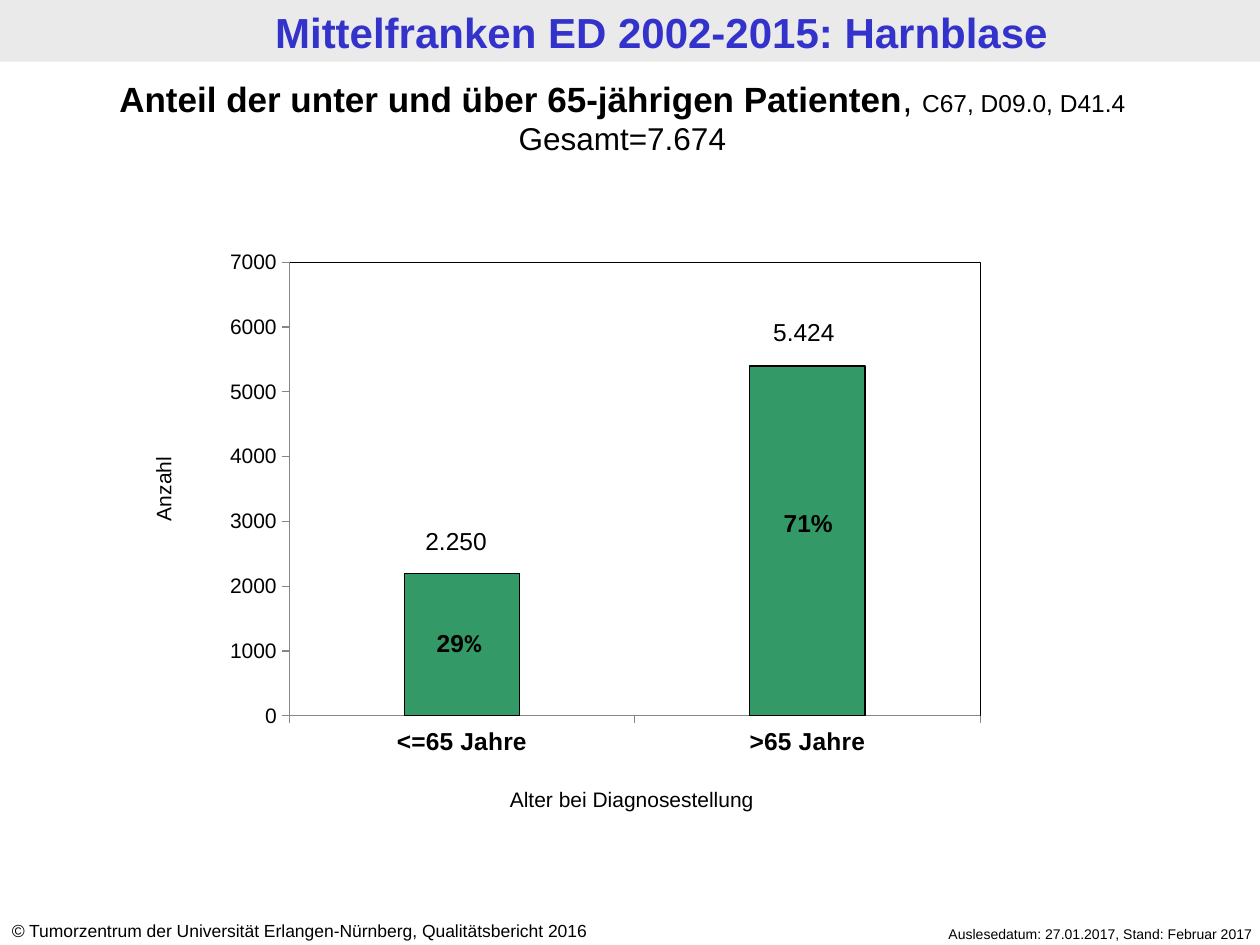
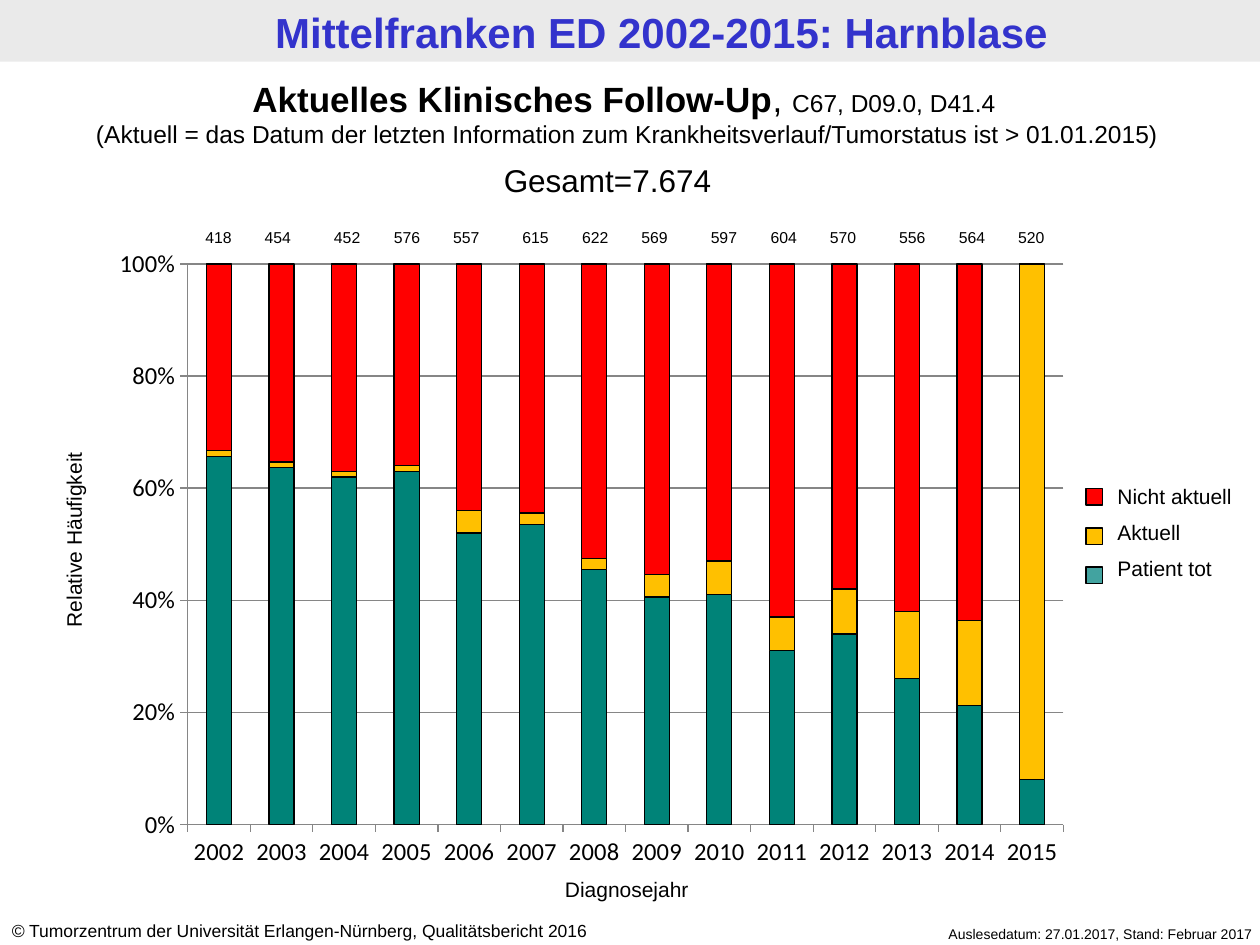
import pptx
import pptx.util
import pptx.chart.data
import pptx.dml.color
import pptx.enum.chart
import pptx.enum.shapes
import pptx.enum.text
import pptx.oxml
import pptx.oxml.ns
from lxml import etree

COLORS = {
    "band": "EAEAEA", "title": "3333CC", "ink": "000000", "axis": "868686",
    "patients": "339966", "dead": "008378", "dead_key": "008380",
    "current": "FFC000", "outdated": "FF0000",
}
COLUMNS, ROWS = 100, 75  # grid covering the slide
SLIDE_WIDTH, SLIDE_HEIGHT = pptx.util.Inches(10), pptx.util.Inches(7.5)
CODES = "C67, D09.0, D41.4"
TOTAL = "Gesamt=7.674"
CENTER = pptx.enum.text.PP_ALIGN.CENTER
RIGHT = pptx.enum.text.PP_ALIGN.RIGHT


def rgb(name):
    return pptx.dml.color.RGBColor.from_string(COLORS[name])


def place(box):
    """Turn a box in grid columns and rows into slide lengths."""
    left, top, width, height = box
    return (round(left * SLIDE_WIDTH / COLUMNS), round(top * SLIDE_HEIGHT / ROWS),
            round(width * SLIDE_WIDTH / COLUMNS), round(height * SLIDE_HEIGHT / ROWS))


def inside(box, right, down, width, height):
    return box[0] + right, box[1] + down, width, height


def put_text(slide, box, paragraphs, size=12, bold=False, italic=False, color="ink",
             font="Arial", align=None, gap=0, rotation=0, insets=(0.1, 0.05, 0.1, 0.05)):
    """Each paragraph is a string or a list of (text, overrides) runs."""
    holder = slide.shapes.add_textbox(*place(box))
    holder.rotation = rotation
    frame = holder.text_frame
    frame.word_wrap = True
    frame.auto_size = pptx.enum.text.MSO_AUTO_SIZE.SHAPE_TO_FIT_TEXT
    (frame.margin_left, frame.margin_top,
     frame.margin_right, frame.margin_bottom) = map(pptx.util.Inches, insets)
    base = {"size": size, "bold": bold, "italic": italic, "font": font}
    for number, content in enumerate(paragraphs):
        paragraph = frame.add_paragraph() if number else frame.paragraphs[0]
        paragraph.alignment = align
        if number and gap:
            paragraph.space_before = pptx.util.Pt(gap)
        for words, overrides in [(content, {})] if isinstance(content, str) else content:
            look = {**base, **overrides}
            run = paragraph.add_run()
            run.text = words
            run.font.size = pptx.util.Pt(look["size"])
            run.font.bold, run.font.italic = look["bold"], look["italic"]
            run.font.name = look["font"]
            run.font.color.rgb = rgb(color)


def put_rectangle(slide, box, color, outlined=False, opacity=None):
    area = slide.shapes.add_shape(pptx.enum.shapes.MSO_SHAPE.RECTANGLE, *place(box))
    area.shadow.inherit = False
    area.fill.solid()
    area.fill.fore_color.rgb = rgb(color)
    if outlined:
        area.line.color.rgb = rgb("ink")
        area.line.width = pptx.util.Pt(0.75)
    else:
        area.line.fill.background()
    if opacity:
        tint = area.fill._xPr.find(".//" + pptx.oxml.ns.qn("a:srgbClr"))
        etree.SubElement(tint, pptx.oxml.ns.qn("a:alpha"), val=str(opacity * 1000))


def shape_plot(chart, box, plot_box, framed):
    """Fix the inner plot area, given in the grid relative to the chart, and its frame."""
    qn = pptx.oxml.ns.qn
    plot_area = chart._chartSpace.chart.plotArea
    for old in plot_area.findall(qn("c:layout")):
        plot_area.remove(old)
    holder = etree.Element(qn("c:layout"))
    manual = etree.SubElement(holder, qn("c:manualLayout"))
    shares = [part / whole for part, whole in zip(plot_box, box[2:] * 2)]
    settings = [("layoutTarget", "inner"), ("xMode", "edge"), ("yMode", "edge")]
    for tag, value in settings + list(zip("xywh", shares)):
        etree.SubElement(manual, qn("c:" + tag), val=str(value))
    plot_area.insert(0, holder)
    if framed:
        plot_area.append(pptx.oxml.parse_xml(
            f'<c:spPr {pptx.oxml.ns.nsdecls("c", "a")}><a:noFill/><a:ln w="9525">'
            f'<a:solidFill><a:srgbClr val="{COLORS["ink"]}"/></a:solidFill></a:ln></c:spPr>'))


def put_columns(slide, box, kind, categories, series, plot_box, gap, step, top,
                font, sizes, bold_categories=False, number_format="General",
                grid=False, framed=False):
    """Series are (name, values, colour); sizes are for category and value labels."""
    figures = pptx.chart.data.CategoryChartData()
    figures.categories = categories
    for name, values, _ in series:
        figures.add_series(name, values)
    chart = slide.shapes.add_chart(kind, *place(box), figures).chart
    chart.has_title = chart.has_legend = False
    chart.font.size = pptx.util.Pt(18)
    chart.font.name = "Calibri"
    chart.font.color.rgb = rgb("ink")

    plot = chart.plots[0]
    plot.gap_width, plot.overlap, plot.vary_by_categories = gap, 100, False
    for bars, (_, _, color) in zip(plot.series, series):
        bars.format.fill.solid()
        bars.format.fill.fore_color.rgb = rgb(color)
        bars.format.line.color.rgb = rgb("ink")
        bars.format.line.width = pptx.util.Pt(0.75)

    for axis, size in zip((chart.category_axis, chart.value_axis), sizes):
        axis.major_tick_mark = pptx.enum.chart.XL_TICK_MARK.OUTSIDE
        axis.minor_tick_mark = pptx.enum.chart.XL_TICK_MARK.NONE
        axis.format.line.color.rgb = rgb("axis")
        axis.tick_labels.font.size = pptx.util.Pt(size)
        axis.tick_labels.font.name = font
        axis.tick_labels.font.color.rgb = rgb("ink")
    chart.category_axis.tick_labels.font.bold = bold_categories
    scale = chart.value_axis
    scale.minimum_scale, scale.maximum_scale, scale.major_unit = 0, top, step
    scale.tick_labels.number_format = number_format
    scale.tick_labels.number_format_is_linked = False
    scale.has_major_gridlines = grid
    if grid:
        scale.major_gridlines.format.line.color.rgb = rgb("axis")
    shape_plot(chart, box, plot_box, framed)


def header(slide, box):
    put_rectangle(slide, box, "band")
    # The wider left inset moves the centred title to the right
    put_text(slide, inside(box, 0.65, 0.15, box[2], box[3]),
             ["Mittelfranken ED 2002-2015: Harnblase"], size=24, bold=True,
             color="title", align=CENTER, insets=(0.46, 0.04, 0.09, 0.04))


def footer(slide, box):
    put_text(slide, inside(box, -0.05, 0, 52.4, 2.7),
             [[("©", {"italic": True}),
               (" Tumorzentrum der Universität Erlangen-Nürnberg, Qualitätsbericht 2016", {})]],
             size=10)
    put_text(slide, inside(box, 66.5, 0.4, 33.9, 2.4),
             ["Auslesedatum: 27.01.2017, Stand: Februar 2017"], size=8, align=RIGHT)


def heading(slide, box, topic, codes, second_line, second_size):
    put_text(slide, box,
             [[(topic, {"bold": True}), (", ", {}), (codes, {"size": 14})],
              [(second_line, {"size": second_size})]], size=20, align=CENTER)


def age_chart(slide, box):
    put_columns(slide, box, pptx.enum.chart.XL_CHART_TYPE.COLUMN_STACKED,
                ["<=65 Jahre", ">65 Jahre"], [("Anzahl", [2200, 5400], "patients")],
                plot_box=(7.85, 6.62, 54.86, 36), gap=200, step=1000, top=7000,
                font="Arial", sizes=(14, 12), bold_categories=True, framed=True)
    # Shares within the bars, counts above them
    percent = {"font": "Calibri"}
    for right, down, label, bold in [
        (16.25, 35.15, [("29", {}), ("%", percent)], True),
        (43.95, 25.65, "71%", True),
        (16, 27.05, "2.250", False),
        (43.6, 10.5, "5.424", False),
    ]:
        put_text(slide, inside(box, right, down, 10.2, 3.4), [label],
                 size=14, bold=bold, align=CENTER)
    # Axis titles
    put_text(slide, inside(box, 18.4, 47.7, 33.3, 3), ["Alter bei Diagnosestellung"],
             align=CENTER)
    put_text(slide, inside(box, -15.2, 23.1, 26.1, 3), ["Anzahl"],
             align=CENTER, rotation=270)


def follow_up_chart(slide, box):
    put_columns(
        slide, box, pptx.enum.chart.XL_CHART_TYPE.COLUMN_STACKED_100,
        [str(year) for year in range(2002, 2016)],
        [("Patient tot", [65, 63, 62, 63, 52, 53, 45, 41, 41, 31, 34, 26, 21, 8], "dead"),
         ("Aktuell", [1, 1, 1, 1, 4, 2, 2, 4, 6, 6, 8, 12, 15, 92], "current"),
         ("Nicht aktuell",
          [33, 35, 37, 36, 44, 44, 52, 56, 53, 63, 58, 62, 63, None], "outdated")],
        plot_box=(7, 2.25, 69.5, 44.5), gap=150, step=0.2, top=1,
        font="Calibri", sizes=(14, 14), number_format="0%", grid=True)
    # Patients per year, set in groups of three
    counts = [418, 454, 452, 576, 557, 615, 622, 569, 597, 604, 570, 556, 564, 520]
    for number, count in enumerate(counts):
        group, member = divmod(number, 3)
        put_text(slide, inside(box, 6.7 + 14.95 * group + (0, 4.7, 10.2)[member], -1.08,
                               5.5, 2.5), [str(count)], size=9, align=CENTER)
    # Axis titles
    put_text(slide, inside(box, -14.05, 22.6, 24.1, 3.1), ["Relative Häufigkeit"],
             align=CENTER, rotation=270)
    put_text(slide, inside(box, 30.6, 50.35, 22.5, 3.1), ["Diagnosejahr"], align=CENTER)


def legend(slide, box):
    entries = [("Nicht aktuell", "outdated", None), ("Aktuell", "current", None),
               ("Patient tot", "dead_key", 74)]
    put_text(slide, inside(box, 1.5, 0, 14.2, box[3]), [label for label, _, _ in entries],
             gap=6)
    for row, (_, color, opacity) in enumerate(entries):
        put_rectangle(slide, inside(box, 0, 0.9 + 3.1 * row, 1.3, 1.3), color,
                      outlined=True, opacity=opacity)


def new_slide(deck):
    slide = deck.slides.add_slide(deck.slide_layouts[6])
    header(slide, (0, 0, COLUMNS, 4.9))
    footer(slide, (0, 72.55, COLUMNS, 2.7))
    return slide


def age_slide(deck):
    slide = new_slide(deck)
    age_chart(slide, (15.1, 14.2, 69.8, 46.6))
    heading(slide, (0, 5.65, 98.8, 7.4),
            "Anteil der unter und über 65-jährigen Patienten", CODES, TOTAL, 18)


def follow_up_slide(deck):
    slide = new_slide(deck)
    follow_up_chart(slide, (7.9, 18.7, 78, 51.1))
    legend(slide, (86.2, 37.9, 15.7, 9.1))
    heading(slide, (-0.4, 5.65, 100.4, 6.7), "Aktuelles Klinisches Follow-Up", CODES + " ",
            "(Aktuell = das Datum der letzten Information zum "
            "Krankheitsverlauf/Tumorstatus ist > 01.01.2015)", 14)
    put_text(slide, (39, 12.3, 22, 4), [TOTAL], size=18)


def main():
    deck = pptx.Presentation()
    deck.slide_width, deck.slide_height = SLIDE_WIDTH, SLIDE_HEIGHT
    age_slide(deck)
    follow_up_slide(deck)
    deck.save("out.pptx")


if __name__ == "__main__":
    main()
